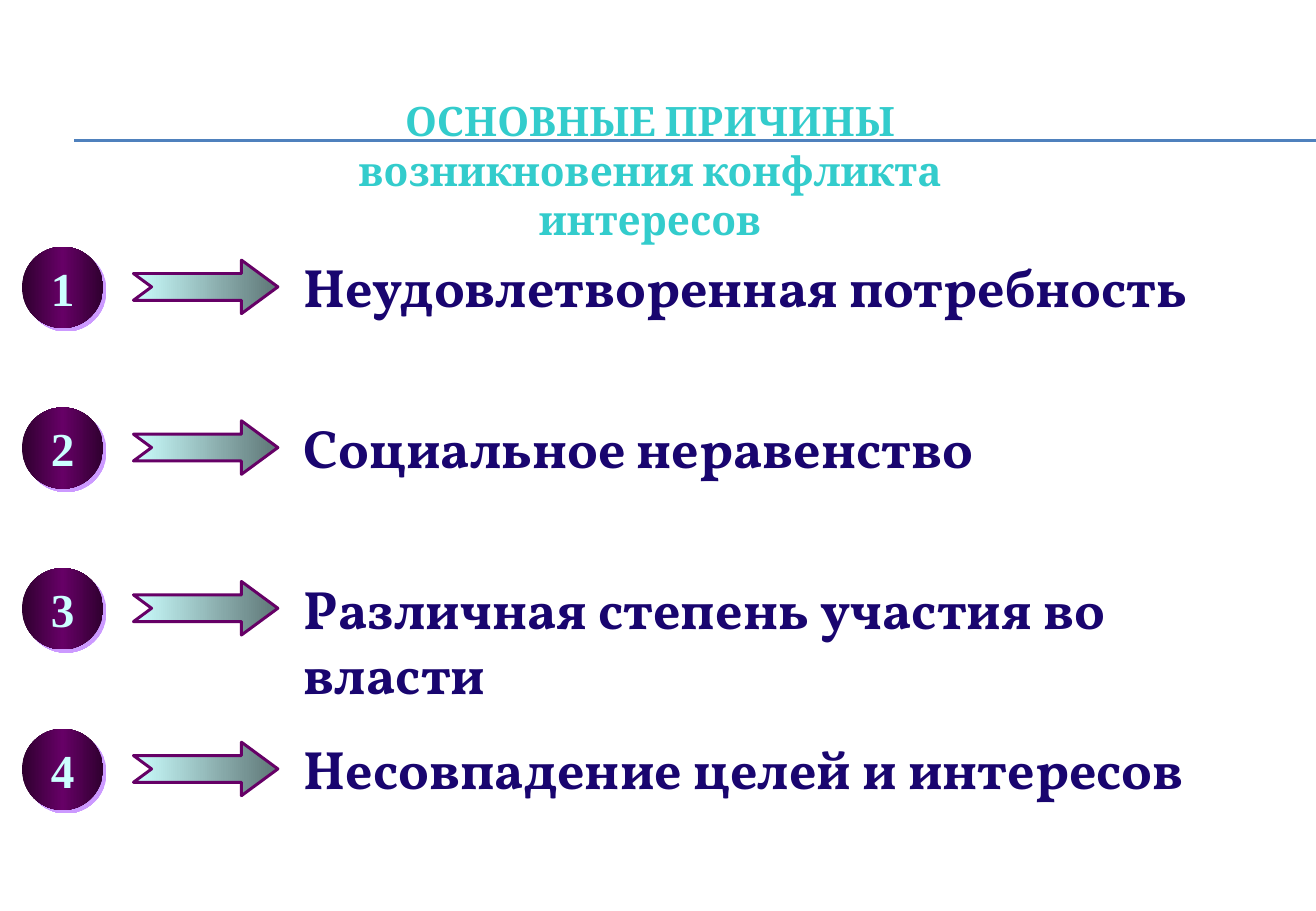
from lxml import etree
from pptx import Presentation
from pptx.dml.color import RGBColor
from pptx.enum.shapes import MSO_CONNECTOR, MSO_SHAPE
from pptx.enum.text import MSO_ANCHOR, MSO_AUTO_SIZE, PP_ALIGN
from pptx.oxml import parse_xml
from pptx.oxml.ns import nsdecls, qn
from pptx.util import Cm, Pt

REASONS = [
    "Неудовлетворенная потребность",
    "Социальное неравенство",
    "Различная степень участия во власти",
    "Несовпадение целей и интересов",
]
CIRCLE_STOPS = [(0, "2F002F"), (50, "660066"), (100, "2F002F")]
ARROW_STOPS = [(0, "CCFFFF"), (100, "5E7676")]
FIRST_ROW, ROW_STEP = 5.16, 3.36


def style_text(para, font_name, size, color):
    for run in para.runs:
        run.font.name = font_name
        run.font.size = Pt(size)
        run.font.bold = True
        run.font.color.rgb = RGBColor.from_string(color)


def fill_gradient(shape, stops):
    """Fill left to right with (percent, colour) stops."""
    shape.fill.gradient()
    shape.fill.gradient_angle = 0
    stop_list = shape.element.spPr.find(qn("a:gradFill")).find(qn("a:gsLst"))
    for old_stop in list(stop_list):
        stop_list.remove(old_stop)
    for percent, color in stops:
        stop_list.append(parse_xml(
            f'<a:gs {nsdecls("a")} pos="{percent * 1000}"><a:srgbClr val="{color}"/></a:gs>'))


deck = Presentation()
deck.slide_width, deck.slide_height = Cm(27.51), Cm(19.05)
page = deck.slides.add_slide(deck.slide_layouts[5])

for rule_top in (2.92, 2.95):
    rule = page.shapes.add_connector(
        MSO_CONNECTOR.STRAIGHT, Cm(1.55), Cm(rule_top), deck.slide_width, Cm(rule_top))
    rule.line.color.rgb = RGBColor.from_string("4F81BD")
    rule.line.width = Pt(0.75)
    etree.SubElement(rule.element.spPr, qn("a:effectLst"))

# The title stands in front of the rules
title = page.shapes.title
title.element.getparent().append(title.element)
title.left, title.top, title.width, title.height = Cm(6.12), Cm(1.88), Cm(14.94), Cm(2)
frame = title.text_frame
frame.text = "ОСНОВНЫЕ ПРИЧИНЫ\nвозникновения конфликта интересов"
frame.word_wrap = False
frame.auto_size = MSO_AUTO_SIZE.NONE
frame.vertical_anchor = MSO_ANCHOR.TOP
for para in frame.paragraphs:
    para.alignment = PP_ALIGN.CENTER
    style_text(para, "Cambria", 24, "33CCCC")
frame.paragraphs[1].space_before = Pt(1)

for number, reason in enumerate(REASONS, start=1):
    row_top = FIRST_ROW + (number - 1) * ROW_STEP

    arrow = page.shapes.add_shape(
        MSO_SHAPE.NOTCHED_RIGHT_ARROW, Cm(2.79), Cm(row_top + 0.28), Cm(3.02), Cm(1.12))
    arrow.adjustments[0], arrow.adjustments[1] = 0.5, 0.68
    arrow.shadow.inherit = False
    fill_gradient(arrow, ARROW_STOPS)
    arrow.line.color.rgb = RGBColor.from_string("660066")
    arrow.line.width = Pt(1.75)

    box = page.shapes.add_textbox(Cm(6.35), Cm(row_top + 0.15), Cm(20.8), Cm(1.35))
    frame = box.text_frame
    frame.word_wrap = True
    frame.margin_left = frame.margin_right = frame.margin_top = frame.margin_bottom = 0
    frame.text = reason
    style_text(frame.paragraphs[0], "Vollkorn", 32, "19056F")

    circle = page.shapes.add_shape(
        MSO_SHAPE.OVAL, Cm(0.46), Cm(row_top), Cm(1.7), Cm(1.7))
    fill_gradient(circle, CIRCLE_STOPS)
    circle.line.fill.background()
    circle.shadow.inherit = False
    circle.element.spPr.find(qn("a:effectLst")).append(parse_xml(
        f'<a:outerShdw {nsdecls("a")} blurRad="0" dist="{Pt(2.8)}" dir="2700000" '
        'algn="ctr" rotWithShape="0"><a:srgbClr val="CC99FF"/></a:outerShdw>'))
    frame = circle.text_frame
    frame.word_wrap = False
    frame.vertical_anchor = MSO_ANCHOR.MIDDLE
    frame.text = str(number)
    frame.paragraphs[0].alignment = PP_ALIGN.CENTER
    style_text(frame.paragraphs[0], "Times New Roman", 28, "CCFFFF")

deck.save("out.pptx")
